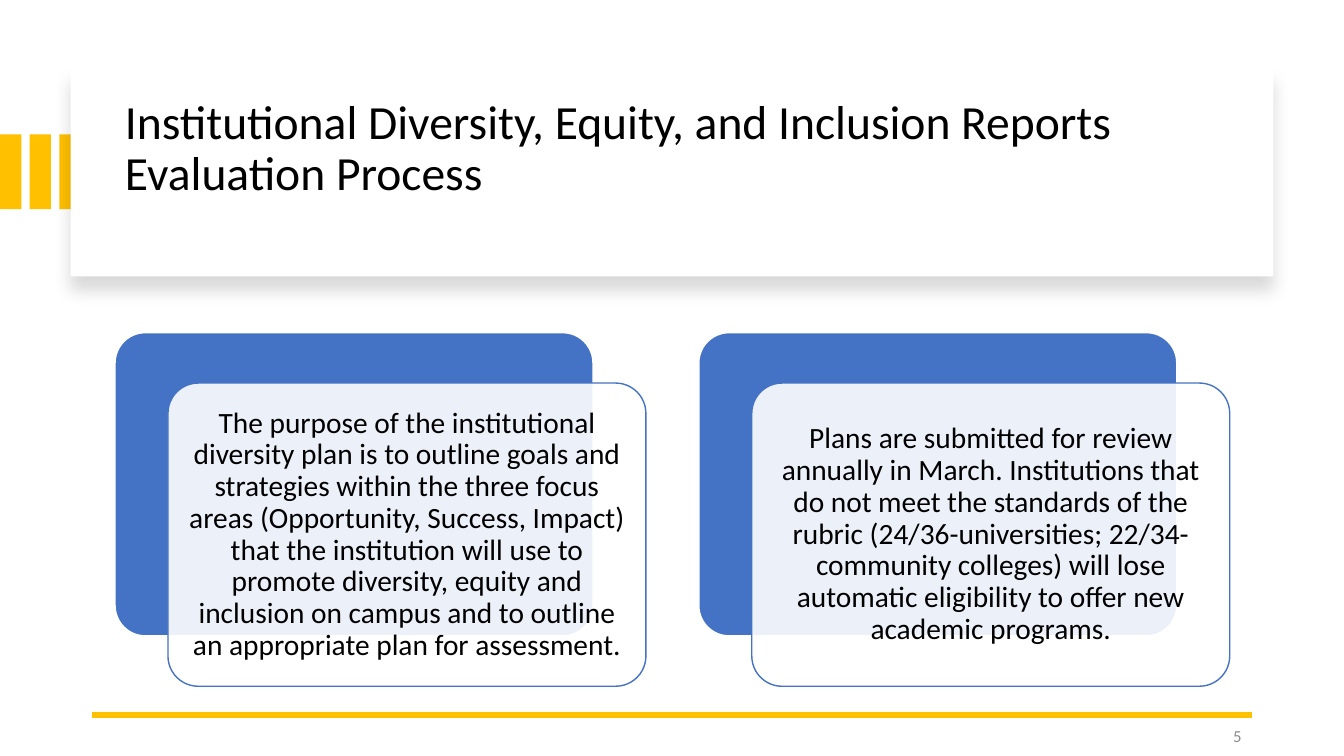
from dataclasses import dataclass

import pptx
import pptx.dml.color
import pptx.enum.shapes
import pptx.enum.text
import pptx.oxml
import pptx.oxml.ns
import pptx.util
from lxml import etree

COLUMNS, ROWS = 160, 90
COLORS = {
    "white": "FFFFFF",
    "gold": "FFC000",
    "blue": "4472C4",
    "black": "000000",
    "gray": "8C8C8C",
}
FONT = "Calibri"
SHAPES = pptx.enum.shapes.MSO_SHAPE
ALIGN = pptx.enum.text.PP_ALIGN
ANCHOR = pptx.enum.text.MSO_ANCHOR
CARD_TEXTS = (
    "The purpose of the institutional diversity plan is to outline goals and "
    "strategies within the three focus areas (Opportunity, Success, Impact) that "
    "the institution will use to promote diversity, equity and inclusion on campus "
    "and to outline an appropriate plan for assessment.",
    "Plans are submitted for review annually in March. Institutions that do not "
    "meet the standards of the rubric (24/36-universities; 22/34-community "
    "colleges) will lose automatic eligibility to offer new academic programs.",
)

presentation = pptx.Presentation()
presentation.slide_width = pptx.util.Inches(13.333)
presentation.slide_height = pptx.util.Inches(7.5)
slide = presentation.slides.add_slide(presentation.slide_layouts[6])


@dataclass(frozen=True)
class Area:
    """A rectangle in grid columns and rows."""
    left: float
    top: float
    width: float
    height: float

    def shifted(self, columns: float, rows: float = 0) -> "Area":
        return Area(self.left + columns, self.top + rows, self.width, self.height)

    def lengths(self) -> tuple[int, int, int, int]:
        return (across(self.left), down(self.top),
                across(self.width), down(self.height))


@dataclass(frozen=True)
class TextStyle:
    size: float
    color: str = "black"
    align: ALIGN = ALIGN.LEFT
    anchor: ANCHOR = ANCHOR.MIDDLE
    line_spacing: float = 0.9
    side_inset: float = 0.1
    end_inset: float = 0.05


TITLE_STYLE = TextStyle(34, anchor=ANCHOR.TOP, end_inset=0.08)
CARD_STYLE = TextStyle(21, align=ALIGN.CENTER, side_inset=0.09, end_inset=0.09)
NUMBER_STYLE = TextStyle(12, "gray", ALIGN.RIGHT, line_spacing=1)


def across(columns: float) -> int:
    return round(presentation.slide_width * columns / COLUMNS)


def down(rows: float) -> int:
    return round(presentation.slide_height * rows / ROWS)


def rgb(name: str) -> pptx.dml.color.RGBColor:
    return pptx.dml.color.RGBColor.from_string(COLORS[name])


def add_block(area: Area, fill: str, line: str | None = None,
              kind: SHAPES = SHAPES.RECTANGLE):
    shape = slide.shapes.add_shape(kind, *area.lengths())
    shape.shadow.inherit = False
    shape.fill.solid()
    shape.fill.fore_color.rgb = rgb(fill)
    if line:
        shape.line.color.rgb = rgb(line)
        shape.line.width = pptx.util.Pt(1)
    else:
        shape.line.fill.background()
    return shape


def write(shape, text: str, style: TextStyle) -> None:
    frame = shape.text_frame
    frame.word_wrap = True
    frame.vertical_anchor = style.anchor
    frame.margin_left = frame.margin_right = pptx.util.Inches(style.side_inset)
    frame.margin_top = frame.margin_bottom = pptx.util.Inches(style.end_inset)
    paragraph = frame.paragraphs[0]
    paragraph.text = text
    paragraph.alignment = style.align
    paragraph.line_spacing = style.line_spacing
    paragraph.font.name = FONT
    paragraph.font.size = pptx.util.Pt(style.size)
    paragraph.font.color.rgb = rgb(style.color)


def add_text(area: Area, text: str, style: TextStyle) -> None:
    write(slide.shapes.add_textbox(*area.lengths()), text, style)


def add_soft_shadow(shape) -> None:
    effects = shape._element.spPr.find(pptx.oxml.ns.qn("a:effectLst"))
    effects.append(pptx.oxml.parse_xml(
        f'<a:outerShdw {pptx.oxml.ns.nsdecls("a")} blurRad="{pptx.util.Pt(11)}" '
        f'dist="{pptx.util.Pt(10)}" dir="5400000" algn="t" rotWithShape="0">'
        f'<a:srgbClr val="{COLORS["black"]}"><a:alpha val="15000"/></a:srgbClr>'
        '</a:outerShdw>'))


def set_opacity(shape, percent: int) -> None:
    color = shape._element.spPr.find(
        f'{pptx.oxml.ns.qn("a:solidFill")}/{pptx.oxml.ns.qn("a:srgbClr")}')
    etree.SubElement(color, pptx.oxml.ns.qn("a:alpha"), val=str(percent * 1000))


def add_card(area: Area, text: str) -> None:
    """Draw a blue card with a translucent text card in front of it."""
    back = add_block(area, "blue", "white", SHAPES.ROUNDED_RECTANGLE)
    front = add_block(area.shifted(6.3, 6), "white", "blue", SHAPES.ROUNDED_RECTANGLE)
    for card in (back, front):
        card.adjustments[0] = 0.1
    set_opacity(front, 90)
    write(front, text, CARD_STYLE)


def add_footer_rule(left: float, right: float, row: float) -> None:
    rule = slide.shapes.add_connector(
        pptx.enum.shapes.MSO_CONNECTOR.STRAIGHT,
        across(right), down(row), across(left), down(row))
    rule.line.color.rgb = rgb("gold")
    rule.line.width = pptx.util.Pt(4.5)
    etree.SubElement(rule._element.spPr, pptx.oxml.ns.qn("a:effectLst"))


def main() -> None:
    slide.background.fill.solid()
    slide.background.fill.fore_color.rgb = rgb("white")

    first_bar = Area(0, 16, 2.55, 8.9)
    for index in range(3):
        add_block(first_bar.shifted(3.53 * index), "gold")

    add_soft_shadow(add_block(Area(8.4, 8, 143.2, 24.9), "white"))
    add_text(Area(13.7, 10.7, 133.6, 20.4),
             "Institutional Diversity, Equity, and Inclusion Reports Evaluation Process",
             TITLE_STYLE)

    add_footer_rule(11, 149, 85.1)
    add_text(Area(113, 85.2, 36, 4.8), "5", NUMBER_STYLE)

    first_card = Area(13.7, 39.6, 56.9, 36.1)
    for index, text in enumerate(CARD_TEXTS):
        add_card(first_card.shifted(69.5 * index), text)

    presentation.save("out.pptx")


if __name__ == "__main__":
    main()
